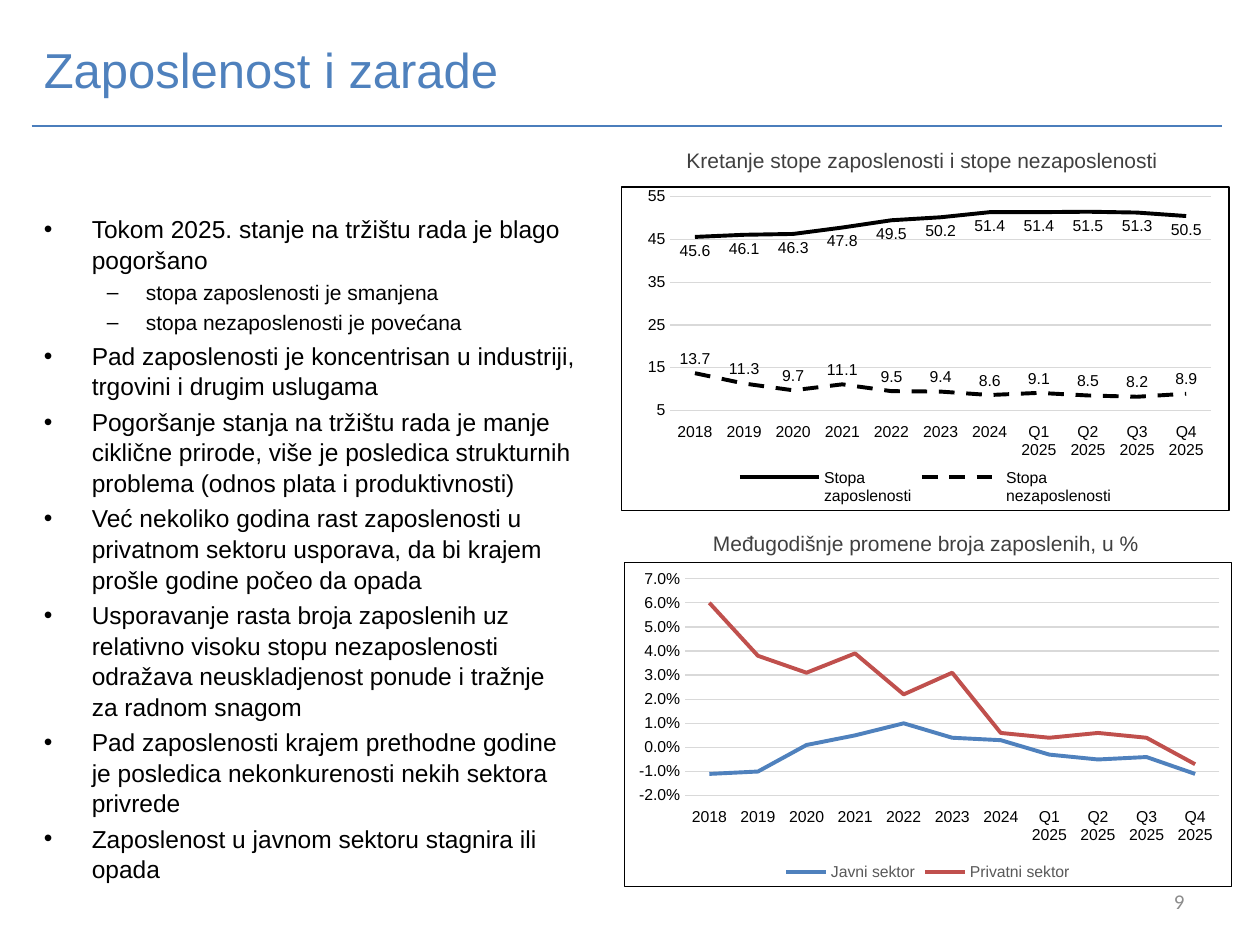
"""Build the slide on employment and wages: bullets on the left, two line charts on the right."""
from dataclasses import dataclass
from typing import Optional

from lxml import etree
from pptx import Presentation
from pptx.chart.data import CategoryChartData
from pptx.dml.color import RGBColor
from pptx.enum.chart import XL_CHART_TYPE, XL_LABEL_POSITION, XL_LEGEND_POSITION, XL_TICK_LABEL_POSITION, XL_TICK_MARK
from pptx.enum.dml import MSO_LINE
from pptx.enum.shapes import MSO_CONNECTOR
from pptx.enum.text import MSO_ANCHOR, PP_ALIGN
from pptx.oxml import parse_xml
from pptx.oxml.ns import nsdecls, qn
from pptx.util import Inches, Pt

LINE_CHART = XL_CHART_TYPE.LINE
BELOW, ABOVE = XL_LABEL_POSITION.BELOW, XL_LABEL_POSITION.ABOVE
LEGEND_BOTTOM = XL_LEGEND_POSITION.BOTTOM
LABELS_LOW = XL_TICK_LABEL_POSITION.LOW
NO_TICK = XL_TICK_MARK.NONE
DASH, SOLID = MSO_LINE.DASH, MSO_LINE.SOLID
STRAIGHT = MSO_CONNECTOR.STRAIGHT
TOP, MIDDLE = MSO_ANCHOR.TOP, MSO_ANCHOR.MIDDLE
LEFT, CENTER, RIGHT = PP_ALIGN.LEFT, PP_ALIGN.CENTER, PP_ALIGN.RIGHT

BLACK = RGBColor(0x00, 0x00, 0x00)
BLUE = RGBColor(0x4F, 0x81, 0xBD)
RULE_BLUE = RGBColor(0x4B, 0x7E, 0xBC)
RED = RGBColor(0xC0, 0x50, 0x4D)
DARK_GRAY = RGBColor(0x40, 0x40, 0x40)
LEGEND_GRAY = RGBColor(0x59, 0x59, 0x59)
NUMBER_GRAY = RGBColor(0x8C, 0x8C, 0x8C)
GRID_GRAY = RGBColor(0xD9, 0xD9, 0xD9)

PERIODS = [str(year) for year in range(2018, 2025)] + [f"Q{q} 2025" for q in range(1, 5)]


@dataclass
class Label:
    text: str
    left: float
    top: float
    width: float
    height: float
    size: int
    color: RGBColor
    align: PP_ALIGN = LEFT
    anchor: MSO_ANCHOR = MIDDLE
    font: str = "Arial"


@dataclass
class Bullet:
    text: str
    level: int = 0


@dataclass
class BulletStyle:
    char: str
    margin: float
    hanging: float
    size: int


@dataclass
class Series:
    name: str
    values: list[float]
    color: RGBColor
    dash: MSO_LINE = SOLID
    labels: Optional[XL_LABEL_POSITION] = None


@dataclass
class LineChart:
    left: float
    top: float
    low: float
    high: float
    step: float
    number_format: str
    legend_color: RGBColor
    plot: tuple[float, float, float, float]
    series: list[Series]


LABELS = [
    Label("Zaposlenost i zarade", 0.25, -0.08, 9, 1.25, 28, BLUE),
    Label("Kretanje stope zaposlenosti i stope nezaposlenosti", 4.82, 1.12, 5, 0.3, 12, DARK_GRAY, CENTER, TOP),
    Label("Međugodišnje promene broja zaposlenih, u %", 4.85, 4.16, 5, 0.3, 12, DARK_GRAY, CENTER, TOP),
    Label("9", 7.17, 6.95, 2.33, 0.4, 12, NUMBER_GRAY, RIGHT, MIDDLE, "Calibri"),
]

BULLET_STYLES = [BulletStyle("•", 0.38, 0.38, 14), BulletStyle("–", 0.81, 0.31, 12)]

BULLETS = [
    Bullet("Tokom 2025. stanje na tržištu rada je blago pogoršano"),
    Bullet("stopa zaposlenosti je smanjena", 1),
    Bullet("stopa nezaposlenosti je povećana", 1),
    Bullet("Pad zaposlenosti je koncentrisan u industriji, trgovini i drugim uslugama"),
    Bullet("Pogoršanje stanja na tržištu rada je manje ciklične prirode, više je posledica "
           "strukturnih problema (odnos plata i produktivnosti)"),
    Bullet("Već nekoliko godina rast zaposlenosti u privatnom sektoru usporava, da bi krajem "
           "prošle godine počeo da opada"),
    Bullet("Usporavanje rasta broja zaposlenih uz relativno visoku stopu nezaposlenosti "
           "odražava neuskladjenost ponude i tražnje za radnom snagom"),
    Bullet("Pad zaposlenosti krajem prethodne godine je posledica nekonkurenosti nekih sektora privrede"),
    Bullet("Zaposlenost u javnom sektoru stagnira ili opada"),
]

CHARTS = [
    LineChart(4.93, 1.48, 5, 55, 10, "0", BLACK, (0.08, 0.03, 0.89, 0.66), [
        Series("Stopa \nzaposlenosti",
               [45.6, 46.1, 46.3, 47.8, 49.5, 50.2, 51.4, 51.4, 51.5, 51.3, 50.5], BLACK, labels=BELOW),
        Series("Stopa \nnezaposlenosti",
               [13.7, 11.3, 9.7, 11.1, 9.5, 9.4, 8.6, 9.1, 8.5, 8.2, 8.9], BLACK, DASH, ABOVE),
    ]),
    LineChart(4.95, 4.46, -0.02, 0.07, 0.01, "0.0%", LEGEND_GRAY, (0.1, 0.05, 0.88, 0.67), [
        Series("Javni sektor",
               [-0.011, -0.01, 0.001, 0.005, 0.01, 0.004, 0.003, -0.003, -0.005, -0.004, -0.011], BLUE),
        Series("Privatni sektor",
               [0.06, 0.038, 0.031, 0.039, 0.022, 0.031, 0.006, 0.004, 0.006, 0.004, -0.007], RED),
    ]),
]


def style_font(font, size: int, color: RGBColor, name: str = "Arial") -> None:
    font.size, font.name, font.color.rgb = Pt(size), name, color


def add_label(s, label: Label) -> None:
    sp = s.shapes.add_textbox(*map(Inches, (label.left, label.top, label.width, label.height)))
    tf = sp.text_frame
    tf.word_wrap, tf.vertical_anchor = True, label.anchor
    p = tf.paragraphs[0]
    p.text, p.alignment = label.text, label.align
    style_font(p.runs[0].font, label.size, label.color, label.font)


def add_bullets(s, bullets: list[Bullet]) -> None:
    tf = s.shapes.add_textbox(Inches(0.25), Inches(1.64), Inches(4.42), Inches(5.51)).text_frame
    tf.word_wrap = True
    for i, bullet in enumerate(bullets):
        style = BULLET_STYLES[bullet.level]
        p = tf.add_paragraph() if i else tf.paragraphs[0]
        p.text, p.level, p.line_spacing = bullet.text, bullet.level, 1.04
        if i:
            p.space_before = Pt(0.2 * style.size)
        pPr = p._p.get_or_add_pPr()
        pPr.set("marL", str(Inches(style.margin)))
        pPr.set("indent", str(-Inches(style.hanging)))
        etree.SubElement(pPr, qn("a:buFont")).set("typeface", "Arial")
        etree.SubElement(pPr, qn("a:buChar")).set("char", style.char)
        style_font(p.runs[0].font, style.size, BLACK)


def add_rule(s) -> None:
    line = s.shapes.add_connector(STRAIGHT, Inches(0.25), Inches(1), Inches(9.7), Inches(1))
    line.line.color.rgb, line.line.width = RULE_BLUE, Pt(0.75)
    etree.SubElement(line._element.spPr, qn("a:effectLst"))


def frame_chart(chart, plot: tuple[float, float, float, float]) -> None:
    space = chart._chartSpace
    space.find(qn("c:chart")).addnext(parse_xml(
        f'<c:spPr {nsdecls("c", "a")}><a:noFill/><a:ln w="{Pt(0.75)}"><a:solidFill>'
        f'<a:srgbClr val="{BLACK}"/></a:solidFill></a:ln></c:spPr>'))
    area = space.find(".//" + qn("c:plotArea"))
    for old in area.findall(qn("c:layout")):
        area.remove(old)
    layout = etree.Element(qn("c:layout"))
    manual = etree.SubElement(layout, qn("c:manualLayout"))
    values = zip(("layoutTarget", "xMode", "yMode", "x", "y", "w", "h"), ("inner", "edge", "edge", *plot))
    for tag, value in values:
        etree.SubElement(manual, qn(f"c:{tag}")).set("val", str(value))
    area.insert(0, layout)


def add_line_chart(s, item: LineChart) -> None:
    data = CategoryChartData()
    data.categories = PERIODS
    for series in item.series:
        data.add_series(series.name, series.values)
    chart = s.shapes.add_chart(LINE_CHART, Inches(item.left), Inches(item.top),
                               Inches(4.83), Inches(2.58), data).chart
    chart.has_title = False
    style_font(chart.font, 9, BLACK)
    chart.has_legend = True
    chart.legend.position, chart.legend.include_in_layout = LEGEND_BOTTOM, False
    style_font(chart.legend.font, 9, item.legend_color)
    cat, val = chart.category_axis, chart.value_axis
    for axis in (cat, val):
        axis.major_tick_mark = axis.minor_tick_mark = NO_TICK
        style_font(axis.tick_labels.font, 9, BLACK)
    cat.tick_label_position = LABELS_LOW
    val.minimum_scale, val.maximum_scale, val.major_unit = item.low, item.high, item.step
    val.tick_labels.number_format, val.tick_labels.number_format_is_linked = item.number_format, False
    val.format.line.fill.background()
    for line in (cat.format.line, val.major_gridlines.format.line):
        line.color.rgb, line.width = GRID_GRAY, Pt(0.75)
    chart.plots[0].vary_by_categories = False
    for series, drawn in zip(item.series, chart.plots[0].series):
        drawn.smooth = False
        line = drawn.format.line
        line.color.rgb, line.width, line.dash_style = series.color, Pt(2.25), series.dash
        if series.labels is not None:
            labels = drawn.data_labels
            labels.show_value, labels.position = True, series.labels
            labels.number_format, labels.number_format_is_linked = "0.0", False
            style_font(labels.font, 9, BLACK)
    frame_chart(chart, item.plot)


def main() -> None:
    prs = Presentation()
    prs.slide_width, prs.slide_height = Inches(10), Inches(7.5)
    s = prs.slides.add_slide(prs.slide_layouts[6])
    add_rule(s)
    add_bullets(s, BULLETS)
    for item in CHARTS:
        add_line_chart(s, item)
    for label in LABELS:
        add_label(s, label)
    prs.save("out.pptx")


if __name__ == "__main__":
    main()
